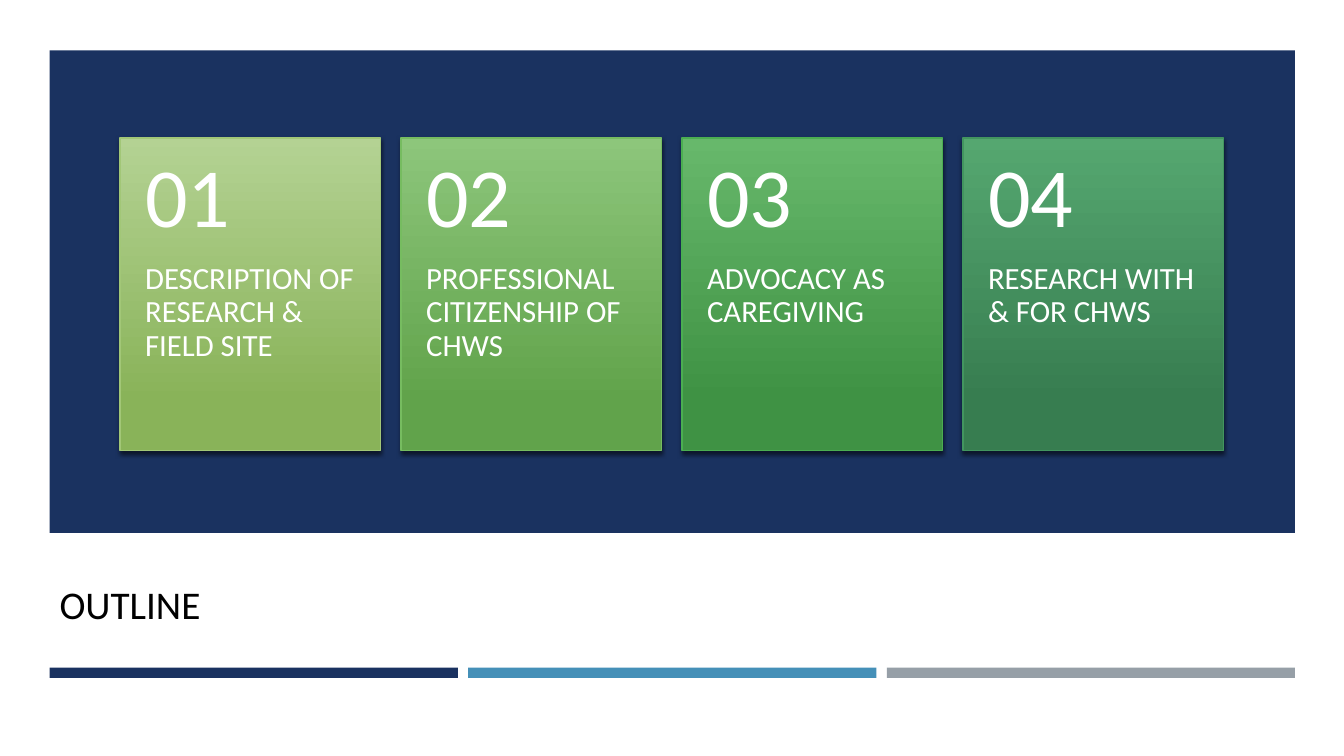
from lxml.etree import SubElement
from pptx import Presentation
from pptx.dml.color import RGBColor
from pptx.enum.shapes import MSO_SHAPE as Shape
from pptx.enum.text import MSO_ANCHOR as Anchor
from pptx.oxml.ns import qn
from pptx.util import Pt

FONT = "Calibri"
WHITE = "FFFFFF"
NAVY = "1A3260"
MARGIN = 35.5
CONTENT_WIDTH = 889.5

BAR_COLORS = [NAVY, "4590B8", "969FA7"]
BAR_WIDTH = 291.6
BAR_STEP = 298.95

CARD_LEFT, CARD_TOP = 85.7, 98.6
CARD_WIDTH, CARD_HEIGHT = 186, 223.2
CARD_STEP = 200.7
NUMBER_HEIGHT = CARD_HEIGHT * 0.4
CARDS = [
    ("DESCRIPTION OF RESEARCH & FIELD SITE", "B4D293", "89B359", "A2C777"),
    ("PROFESSIONAL CITIZENSHIP OF CHWS", "8DC67B", "61A34B", "76BC60"),
    ("ADVOCACY AS CAREGIVING", "67B86B", "3F9244", "4BAE51"),
    ("RESEARCH WITH & FOR CHWS", "55A770", "377D50", "42955F"),
]


def color(value):
    return RGBColor.from_string(value)


def add_rectangle(slide, left, top, width, height, fill):
    shape = slide.shapes.add_shape(
        Shape.RECTANGLE, Pt(left), Pt(top), Pt(width), Pt(height))
    shape.shadow.inherit = False
    shape.fill.solid()
    shape.fill.fore_color.rgb = color(fill)
    shape.line.fill.background()
    return shape


def add_text(slide, text, left, top, width, height, size, fill=WHITE,
             anchor=Anchor.TOP, insets=(18, 0, 18, 26), spacing=0.9):
    box = slide.shapes.add_textbox(Pt(left), Pt(top), Pt(width), Pt(height))
    frame = box.text_frame
    frame.word_wrap = True
    frame.vertical_anchor = anchor
    (frame.margin_left, frame.margin_top,
     frame.margin_right, frame.margin_bottom) = map(Pt, insets)
    frame.text = text
    paragraph = frame.paragraphs[0]
    paragraph.line_spacing = spacing
    font = paragraph.runs[0].font
    font.name = FONT
    font.size = Pt(size)
    font.color.rgb = color(fill)


def add_gradient(shape, start, end):
    shape.fill.gradient()
    shape.fill.gradient_angle = 270
    stops = shape.fill.gradient_stops
    for stop, value, position in zip(stops, (start, end), (0, 0.84)):
        stop.color.rgb = color(value)
        stop.position = position


def add_shadow(shape):
    effects = shape._element.spPr.find(qn("a:effectLst"))
    shadow = SubElement(effects, qn("a:outerShdw"), blurRad=str(Pt(3)),
                        dist=str(Pt(2)), dir="5400000", rotWithShape="0")
    tint = SubElement(shadow, qn("a:srgbClr"), val="000000")
    SubElement(tint, qn("a:alpha"), val="55000")


def add_card(slide, index, label, start, end, outline):
    left = CARD_LEFT + index * CARD_STEP
    card = add_rectangle(slide, left, CARD_TOP, CARD_WIDTH, CARD_HEIGHT, end)
    add_gradient(card, start, end)
    card.line.color.rgb = color(outline)
    card.line.width = Pt(1)
    add_shadow(card)
    add_text(slide, label, left, CARD_TOP + NUMBER_HEIGHT, CARD_WIDTH,
             CARD_HEIGHT - NUMBER_HEIGHT, 22)
    add_text(slide, f"{index + 1:02}", left, CARD_TOP, CARD_WIDTH,
             NUMBER_HEIGHT, 60, anchor=Anchor.MIDDLE, insets=(18, 13, 18, 13))


def main():
    presentation = Presentation()
    presentation.slide_width = Pt(960)
    presentation.slide_height = Pt(540)
    slide = presentation.slides.add_slide(presentation.slide_layouts[6])

    add_rectangle(slide, 0, 0, 960, 540, WHITE)
    add_text(slide, "OUTLINE", MARGIN, 394, CONTENT_WIDTH, 75, 28, "000000",
             Anchor.MIDDLE, (7.2, 3.6, 7.2, 3.6), 1)
    add_rectangle(slide, MARGIN, 36, CONTENT_WIDTH, 344.7, NAVY)
    for index, fill in enumerate(BAR_COLORS):
        add_rectangle(slide, MARGIN + index * BAR_STEP, 476.8, BAR_WIDTH, 7.4, fill)
    for index, card in enumerate(CARDS):
        add_card(slide, index, *card)

    presentation.save("out.pptx")


if __name__ == "__main__":
    main()
